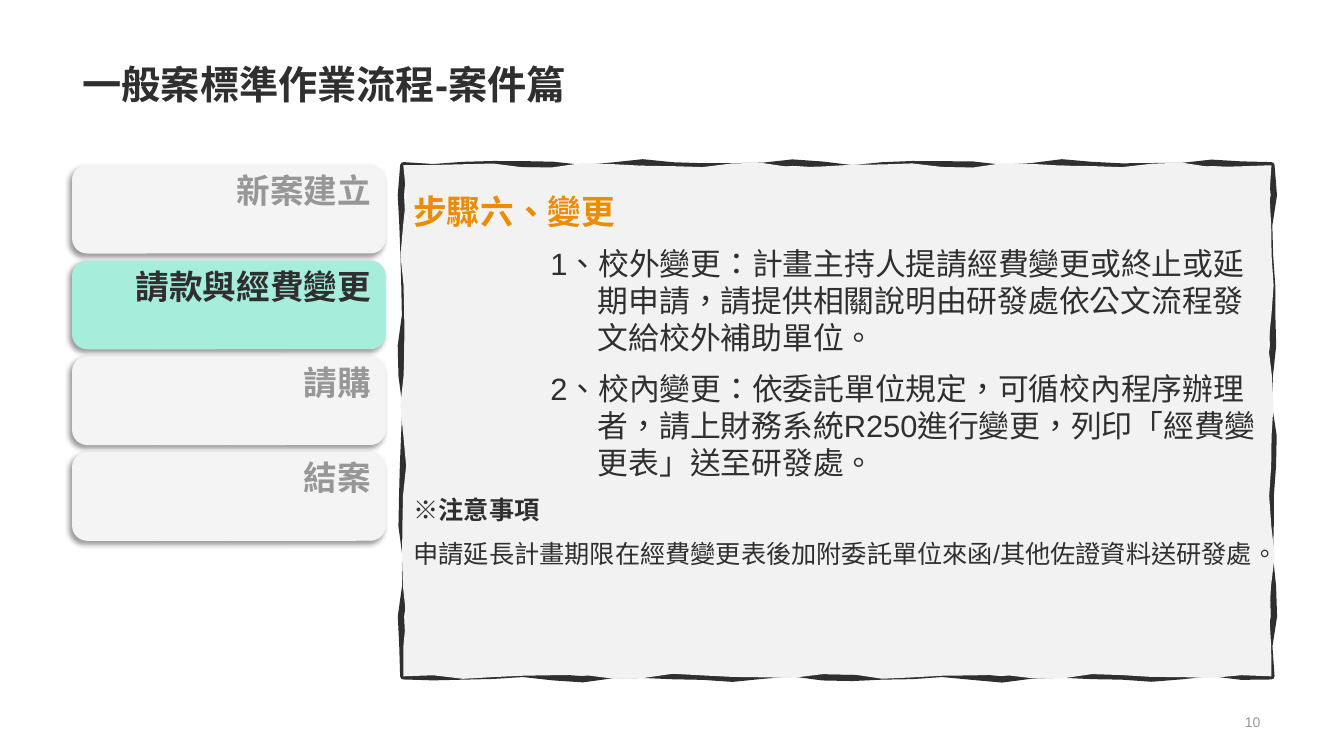
from copy import deepcopy
from math import pi, sin

from lxml import etree
from pptx import Presentation
from pptx.dml.color import RGBColor
from pptx.enum.lang import MSO_LANGUAGE_ID as Language
from pptx.enum.shapes import MSO_SHAPE as Shape
from pptx.enum.text import MSO_ANCHOR as Anchor, PP_ALIGN as Align
from pptx.oxml.ns import qn
from pptx.util import Inches, Pt

TITLE = "一般案標準作業流程-案件篇"
PAGE_NUMBER = "10"
STAGES = ["新案建立", "請款與經費變更", "請購", "結案"]
CURRENT_STAGE = "請款與經費變更"
HEADING = "步驟六、變更"
STEPS = [
    "1、校外變更：計畫主持人提請經費變更或終止或延期申請，請提供相關說明由研發處依公文流程發文給校外補助單位。",
    "2、校內變更：依委託單位規定，可循校內程序辦理者，請上財務系統R250進行變更，列印「經費變更表」送至研發處。",
]
NOTE_HEADING = "※注意事項"
NOTE = "申請延長計畫期限在經費變更表後加附委託單位來函/其他佐證資料送研發處。"

COLORS = {"ink": "2F2F2F", "muted": "979797", "accent": "EB8C02", "panel": "F2F2F2",
          "stage": "F4F4F4", "current": "A6EDDC", "shadow": "000000"}
FONT, HEADING_FONT = "Arial", "Noto Sans CJK SC"

WIDTH, HEIGHT = 13.33, 7.5
LEFT, TOP, RIGHT = 0.72, 1.64, 12.61
STAGE_WIDTH, STAGE_HEIGHT, STAGE_GAP = 3.1, 0.87, 0.08
PANEL_LEFT, PANEL_BOTTOM = 4, 6.71
WAVE_HEIGHT, WAVE_STEP = 0.02, 0.3
UNITS_PER_INCH = 1000


def color(name):
    return RGBColor.from_string(COLORS[name])


def write(paragraph, text, size, ink="ink", bold=False, font=FONT):
    run = paragraph.add_run()
    run.text = text
    run.font.name = font
    run.font.size = Pt(size)
    run.font.bold = bold
    run.font.color.rgb = color(ink)
    run.font.language_id = Language.TRADITIONAL_CHINESE


def add_shadow(shape):
    shape.shadow.inherit = False
    effects = shape._element.spPr.find(qn("a:effectLst"))
    shadow = etree.SubElement(effects, qn("a:outerShdw"), blurRad=str(Pt(4)), dist=str(Pt(3)),
                              dir=str(135 * 60000), algn="tr", rotWithShape="0")
    tint = etree.SubElement(shadow, qn("a:srgbClr"), val=COLORS["shadow"])
    etree.SubElement(tint, qn("a:alpha"), val="40000")


def add_stage(slide, row, name):
    current = name == CURRENT_STAGE
    top = TOP + row * (STAGE_HEIGHT + STAGE_GAP)
    shape = slide.shapes.add_shape(Shape.ROUNDED_RECTANGLE, Inches(LEFT), Inches(top),
                                   Inches(STAGE_WIDTH), Inches(STAGE_HEIGHT))
    fill = color("current" if current else "stage")
    shape.fill.solid()
    shape.fill.fore_color.rgb = fill
    shape.line.color.rgb = fill
    shape.line.width = Pt(0.75)
    add_shadow(shape)
    shape.text_frame.vertical_anchor = Anchor.TOP
    paragraph = shape.text_frame.paragraphs[0]
    paragraph.alignment = Align.RIGHT
    paragraph.line_spacing = 0.9
    write(paragraph, name, 24, "ink" if current else "muted", True)


def wavy_points(phase):
    corners = [(PANEL_LEFT, TOP), (RIGHT, TOP), (RIGHT, PANEL_BOTTOM), (PANEL_LEFT, PANEL_BOTTOM)]
    points = []
    for side, (x, y) in enumerate(corners):
        next_x, next_y = corners[(side + 1) % 4]
        length = abs(next_x - x) + abs(next_y - y)
        count = round(length / WAVE_STEP)
        for index in range(count):
            share = index / count
            distance = share * length
            wave = sin(4.5 * distance + phase + side) + 0.6 * sin(7.5 * distance + 2 * phase)
            wave *= WAVE_HEIGHT * min(1, 6 * sin(pi * share))
            across, down = (0, wave) if side % 2 == 0 else (wave, 0)
            points.append(((x + (next_x - x) * share + across) * UNITS_PER_INCH,
                           (y + (next_y - y) * share + down) * UNITS_PER_INCH))
    return points


def split_border_and_fill(shape):
    border = next(shape._element.iter(qn("a:path")))
    fill = deepcopy(border)
    border.addnext(fill)
    half = len(border) // 2
    for element in list(border)[half:]:
        border.remove(element)
    for element in list(fill)[:half]:
        fill.remove(element)
    border.set("fill", "none")
    fill.set("stroke", "0")


def add_panel(slide):
    border_start, *border_rest = wavy_points(0)
    fill_start, *fill_rest = wavy_points(2)
    builder = slide.shapes.build_freeform(*border_start, scale=Inches(1) / UNITS_PER_INCH)
    builder.add_line_segments(border_rest, close=True)
    builder.move_to(*fill_start)
    builder.add_line_segments(fill_rest, close=True)
    panel = builder.convert_to_shape()
    split_border_and_fill(panel)
    panel.shadow.inherit = False
    panel.fill.solid()
    panel.fill.fore_color.rgb = color("panel")
    panel.line.color.rgb = color("ink")
    panel.line.width = Pt(4.5)

    frame = panel.text_frame
    frame.word_wrap = True
    frame.vertical_anchor = Anchor.TOP
    frame.margin_left = Inches(PANEL_LEFT + 0.1) - panel.left
    frame.margin_right = panel.left + panel.width - Inches(RIGHT - 0.1)
    frame.margin_top = Inches(TOP + 0.05) - panel.top

    heading = frame.paragraphs[0]
    heading.alignment = Align.LEFT
    heading.line_spacing = 1.5
    write(heading, HEADING, 24, "accent", True, HEADING_FONT)

    body = [(step, 22, False, True) for step in STEPS]
    body += [(NOTE_HEADING, 18, True, False), (NOTE, 18, False, False)]
    for text, size, bold, hanging in body:
        paragraph = frame.add_paragraph()
        paragraph.alignment = Align.LEFT
        paragraph.space_before = Pt(10)
        if hanging:
            properties = paragraph._p.get_or_add_pPr()
            properties.set("marL", str(Inches(1.83)))
            properties.set("indent", str(Inches(-0.47)))
        write(paragraph, text, size, bold=bold)


def add_title(slide):
    title = slide.shapes.title
    title.left, title.top = Inches(LEFT), Inches(0)
    title.width, title.height = Inches(RIGHT - LEFT), Inches(1.12)
    title.text_frame.vertical_anchor = Anchor.BOTTOM
    paragraph = title.text_frame.paragraphs[0]
    paragraph.alignment = Align.LEFT
    paragraph.line_spacing = 0.9
    write(paragraph, TITLE, 28, bold=True)


def add_page_number(slide):
    box = slide.shapes.add_textbox(Inches(9.69), Inches(7.04), Inches(2.91), Inches(0.24))
    box.text_frame.word_wrap = True
    box.text_frame.vertical_anchor = Anchor.MIDDLE
    paragraph = box.text_frame.paragraphs[0]
    paragraph.alignment = Align.RIGHT
    write(paragraph, PAGE_NUMBER, 10, "muted")


def main():
    presentation = Presentation()
    presentation.slide_width, presentation.slide_height = Inches(WIDTH), Inches(HEIGHT)
    slide = presentation.slides.add_slide(presentation.slide_layouts[5])
    add_title(slide)
    add_page_number(slide)
    add_panel(slide)
    for row, name in enumerate(STAGES):
        add_stage(slide, row, name)
    presentation.save("out.pptx")


if __name__ == "__main__":
    main()
